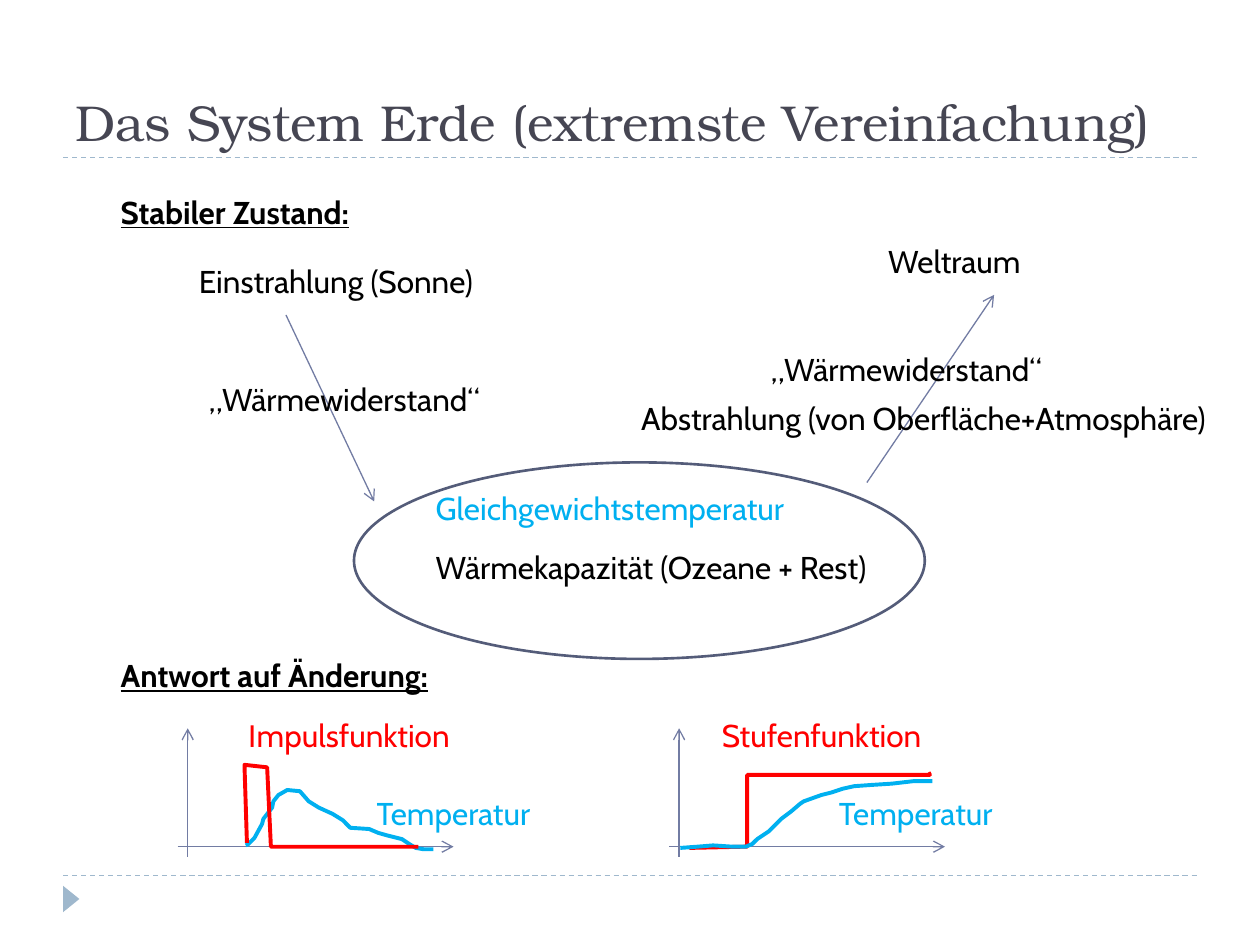
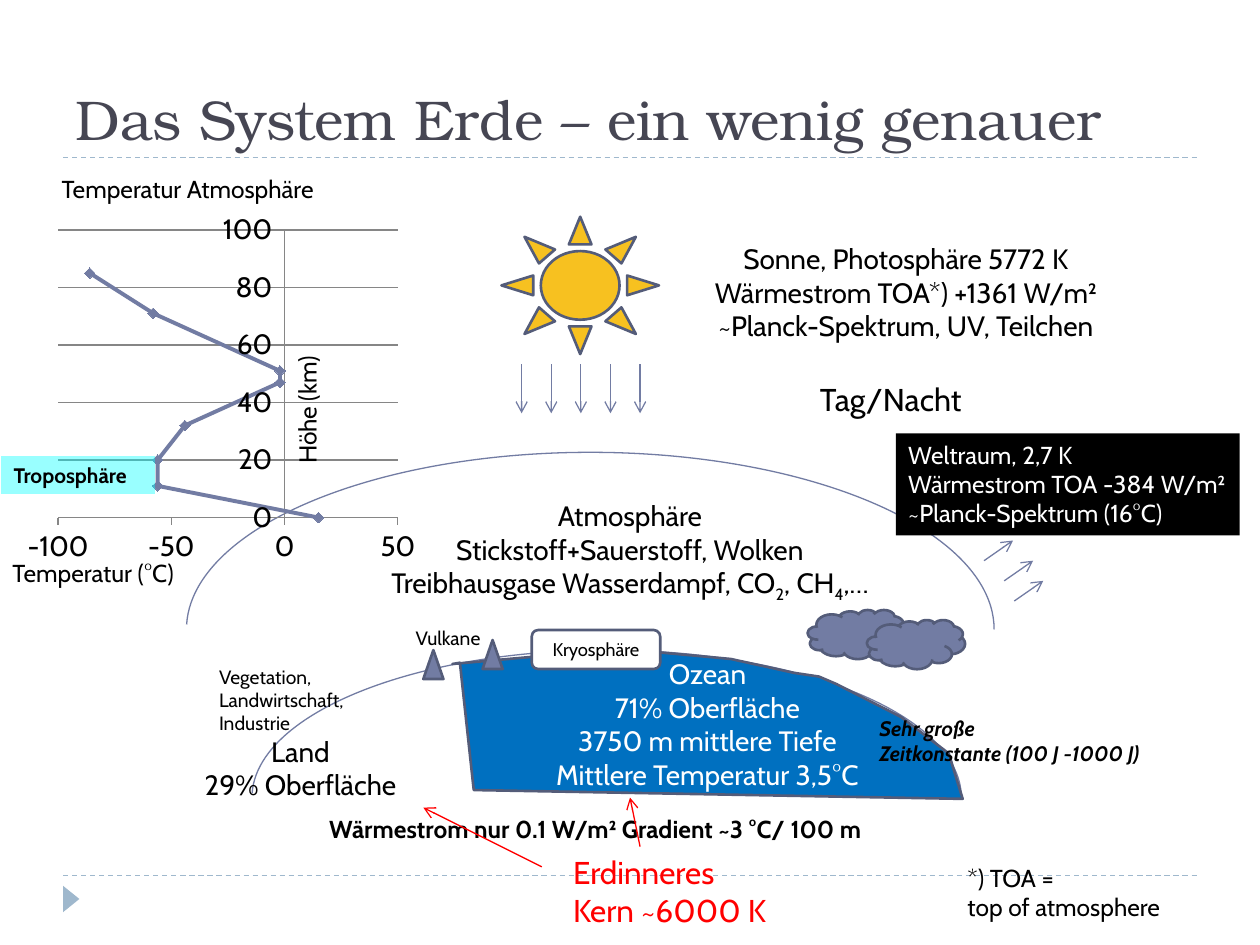
from dataclasses import dataclass

from lxml import etree
from pptx import Presentation
from pptx.chart.data import XyChartData
from pptx.dml.color import RGBColor
from pptx.enum.chart import XL_CHART_TYPE, XL_MARKER_STYLE, XL_TICK_MARK
from pptx.enum.dml import MSO_LINE
from pptx.enum.shapes import MSO_CONNECTOR, MSO_SHAPE
from pptx.enum.text import MSO_ANCHOR, MSO_AUTO_SIZE, PP_ALIGN
from pptx.oxml import parse_xml
from pptx.oxml.ns import nsdecls, qn
from pptx.util import Inches, Pt

STRAIGHT = MSO_CONNECTOR.STRAIGHT
ARC, CLOUD, OVAL = MSO_SHAPE.ARC, MSO_SHAPE.CLOUD, MSO_SHAPE.OVAL
RECT, ROUNDED = MSO_SHAPE.RECTANGLE, MSO_SHAPE.ROUNDED_RECTANGLE
SUN, TRIANGLE = MSO_SHAPE.SUN, MSO_SHAPE.ISOSCELES_TRIANGLE
CENTER = PP_ALIGN.CENTER
TOP, MIDDLE, BOTTOM = MSO_ANCHOR.TOP, MSO_ANCHOR.MIDDLE, MSO_ANCHOR.BOTTOM


@dataclass(frozen=True)
class Theme:
    title_font: str = "TeX Gyre Bonum"
    body_font: str = "Cabin"
    title: str = "464653"
    text: str = "000000"
    white: str = "FFFFFF"
    rule: str = "9FB8CD"
    accent: str = "727CA3"
    outline: str = "545C79"
    red: str = "FF0000"
    cyan: str = "00B0F0"
    ocean: str = "0070C0"
    sun: str = "F7C120"
    tropo: str = "00FFFF"
    grid: str = "868686"
    big: float = 18
    mid: float = 16
    small: float = 14
    note: float = 12
    tiny: float = 11
    thin: float = 0.75
    edge: float = 1.5
    curve: float = 2.25


T = Theme()

# Labels: left, top, width, height, paragraphs, options
HEADING = dict(bold=True, underline=True)
SIMPLE_LABELS = [
    (0.86, 1.48, 2.26, 0.4, ["Stabiler Zustand:"], HEADING),
    (0.86, 5.16, 2.95, 0.4, ["Antwort auf Änderung:"], HEADING),
    (1.48, 2.03, 2.57, 0.4, ["Einstrahlung (Sonne)"], {}),
    (4.99, 3.12, 5.01, 0.4, ["Abstrahlung (von Oberfläche+Atmosphäre)"], {}),
    (3.36, 3.83, 3.12, 0.4, ["Gleichgewichtstemperatur"], dict(color=T.cyan)),
    (3.36, 4.3, 3.95, 0.4, ["Wärmekapazität (Ozeane + Rest)"], {}),
    (1.56, 2.97, 2.41, 0.4, ["„Wärmewiderstand“"], {}),
    (6.02, 2.73, 2.41, 0.4, ["„Wärmewiderstand“"], {}),
    (6.95, 1.87, 1.28, 0.4, ["Weltraum"], {}),
    (1.87, 5.63, 1.84, 0.4, [[("Ι", dict(font="Arial")), ("mpulsfunktion", {})]],
     dict(color=T.red)),
    (5.63, 5.63, 1.81, 0.4, ["Stufenfunktion"], dict(color=T.red)),
    (2.89, 6.25, 1.48, 0.4, ["Temperatur"], dict(color=T.cyan)),
    (6.56, 6.25, 1.48, 0.4, ["Temperatur"], dict(color=T.cyan)),
]
FLUX_ARROWS = [((2.27, 2.5), (2.97, 3.98)), ((6.88, 3.83), (7.89, 2.34))]
GRAPH_LEFTS = (1.41, 5.31)
PULSE = [(1.96, 6.69), (1.94, 6.07), (2.12, 6.09), (2.15, 6.72), (3.32, 6.72)]
PULSE_RESPONSE = [
    (1.95, 6.71), (1.97, 6.7), (2.02, 6.65), (2.08, 6.54), (2.09, 6.5), (2.16, 6.41),
    (2.17, 6.36), (2.21, 6.31), (2.28, 6.27), (2.38, 6.28), (2.45, 6.36), (2.53, 6.41),
    (2.64, 6.46), (2.72, 6.51), (2.78, 6.57), (2.93, 6.58), (3, 6.61), (3.07, 6.63),
    (3.19, 6.66), (3.25, 6.7), (3.3, 6.73), (3.36, 6.74), (3.44, 6.74)]
STEP = [(5.47, 6.73), (5.93, 6.72), (5.93, 6.15), (7.38, 6.15), (7.37, 6.13)]
STEP_RESPONSE = [
    (5.4, 6.73), (5.54, 6.72), (5.66, 6.71), (5.81, 6.72), (5.92, 6.72), (5.97, 6.7),
    (6.01, 6.66), (6.1, 6.6), (6.13, 6.57), (6.2, 6.5), (6.28, 6.44), (6.35, 6.38),
    (6.38, 6.36), (6.52, 6.31), (6.6, 6.29), (6.69, 6.26), (6.78, 6.24), (6.92, 6.23),
    (7.08, 6.22), (7.25, 6.2), (7.4, 6.2)]
CURVES = [(PULSE_RESPONSE, T.cyan), (STEP, T.red), (STEP_RESPONSE, T.cyan), (PULSE, T.red)]

SUB = dict(sub=True)
DETAIL_LABELS = [
    (1.48, 5.78, 1.81, 0.64, ["Land", "29% Oberfläche"], dict(size=T.mid, align=CENTER)),
    (2.58, 3.91, 4.84, 0.91,
     ["Atmosphäre", "Stickstoff+Sauerstoff, Wolken",
      [("Treibhausgase Wasserdampf, CO", {}), ("2", SUB), (", CH", {}), ("4", SUB),
       (",…", {})]], dict(size=T.mid, align=CENTER, wrap=True)),
    (4.77, 1.87, 4.84, 0.91,
     ["Sonne, Photosphäre 5772 K", "Wärmestrom TOA*) +1361 W/m²",
      "~Planck-Spektrum, UV, Teilchen"], dict(size=T.mid, align=CENTER, wrap=True)),
    (3.2, 4.92, 0.76, 0.29, ["Vulkane"], dict(size=T.tiny)),
    (0, 4.38, 1.59, 0.34, ["Temperatur (°C)"], dict(size=T.small)),
    (1.88, 3.05, 1.12, 0.34, ["Höhe (km)"], dict(size=T.small, rotation=270)),
    (4.45, 6.72, 1.75, 0.71, ["Erdinneres", "Kern ~6000 K"], dict(color=T.red)),
    (7.58, 6.8, 1.78, 0.57, ["*) TOA =\vtop of atmosphere"], dict(size=T.small)),
    (1.64, 5.23, 1.24, 0.66, ["Vegetation,", "Landwirtschaft,", "Industrie"],
     dict(size=T.tiny)),
    (6.88, 5.63, 2.49, 0.5, ["Sehr große\vZeitkonstante (100 J -1000 J)"],
     dict(size=T.note, bold=True, italic=True)),
    (6.41, 2.97, 1.34, 0.4, ["Tag/Nacht"], {}),
    (0.39, 1.33, 2.29, 0.34, ["Temperatur Atmosphäre"], dict(size=T.small)),
    (1.25, 6.41, 6.95, 0.34, ["Wärmestrom nur 0.1 W/m² Gradient ~3 °C/ 100 m"],
     dict(size=T.small, bold=True, align=CENTER, wrap=True)),
]
OCEAN_OUTLINE = [
    (3.59, 5.27), (4.93, 5.15), (5.8, 5.23), (6.3, 5.34), (6.5, 5.37), (6.64, 5.43),
    (7.15, 5.69), (7.53, 5.98), (7.64, 6.34), (3.76, 6.27), (3.65, 5.26)]
OCEAN_TEXT = ["Ozean", "71% Oberfläche", "3750 m mittlere Tiefe", "Mittlere Temperatur 3,5°C"]
SPACE_TEXT = ["Weltraum, 2,7 K", "Wärmestrom TOA -384 W/m²\v~Planck-Spektrum (16°C)"]
ARCS = [(2, 5.16, 5.63, 2.34), (1.48, 3.59, 6.41, 2.81)]
SCENERY = [
    (CLOUD, (6.41, 4.84, 0.78, 0.39), T.accent),
    (CLOUD, (6.88, 4.92, 0.78, 0.39), T.accent),
    (SUN, (3.98, 1.72, 1.25, 1.09), T.sun),
    (TRIANGLE, (3.36, 5.16, 0.16, 0.23), T.accent),
    (TRIANGLE, (3.83, 5.08, 0.16, 0.23), T.accent),
]
SPACE_ARROW_STARTS = [(7.81, 4.45), (7.97, 4.61), (8.05, 4.77)]
CORE_ARROWS = [((4.3, 6.88), (3.36, 6.41)), ((5.08, 6.72), (5, 6.33))]
# (temperature in °C, height in km)
PROFILE = [(15, 0), (-56, 11), (-56, 20), (-44, 32), (-2, 47), (-2, 51), (-58, 71), (-86, 85)]
PLOT_AREA = dict(x=0.094, y=0.064, w=0.843, h=0.79)


def rgb(color):
    return RGBColor.from_string(color)


def box(values):
    return [Inches(v) for v in values]


def write(tf, paragraphs, size=T.big, color=T.text, font=T.body_font, bold=False,
          italic=False, underline=False, align=PP_ALIGN.LEFT, anchor=TOP, wrap=False,
          grow=True):
    tf.word_wrap = wrap
    tf.auto_size = MSO_AUTO_SIZE.SHAPE_TO_FIT_TEXT if grow else MSO_AUTO_SIZE.NONE
    tf.vertical_anchor = anchor
    for i, content in enumerate(paragraphs):
        p = tf.paragraphs[0] if i == 0 else tf.add_paragraph()
        p.alignment = align
        styles = [{}]
        if isinstance(content, str):
            p.text = content
            styles *= len(p.runs)
        else:
            for words, _ in content:
                p.add_run().text = words
            styles = [style for _, style in content]
        for r, style in zip(p.runs, styles):
            r.font.name = style.get("font", font)
            r.font.size = Pt(size)
            r.font.color.rgb = rgb(color)
            r.font.bold, r.font.italic, r.font.underline = bold, italic, underline
            if style.get("sub"):
                r.font._element.set("baseline", "-25000")


def label(s, x, y, w, h, paragraphs, rotation=0, **style):
    tb = s.shapes.add_textbox(*box((x, y, w, h)))
    tb.rotation = rotation
    write(tb.text_frame, paragraphs, **style)


def paint(sp, fill=None, line=None, width=T.edge):
    sp.shadow.inherit = False
    if fill:
        sp.fill.solid()
        sp.fill.fore_color.rgb = rgb(fill)
    else:
        sp.fill.background()
    if line:
        sp.line.color.rgb = rgb(line)
        sp.line.width = Pt(width)
    else:
        sp.line.fill.background()
    return sp


def preset(s, kind, at, **style):
    return paint(s.shapes.add_shape(kind, *box(at)), **style)


def outline(s, points, close=False, **style):
    start, *rest = [box(point) for point in points]
    builder = s.shapes.build_freeform(*start)
    builder.add_line_segments(rest, close=close)
    return paint(builder.convert_to_shape(), **style)


def line(s, start, end, color=T.accent, arrow=True):
    c = s.shapes.add_connector(STRAIGHT, *box((*start, *end)))
    c.line.color.rgb = rgb(color)
    c.line.width = Pt(T.thin)
    if arrow:
        etree.SubElement(c.line._get_or_add_ln(), qn("a:tailEnd"), type="arrow")
    else:
        c.line.dash_style = MSO_LINE.DASH
    etree.SubElement(c._element.spPr, qn("a:effectLst"))


def new_slide(prs, title, size):
    s = prs.slides.add_slide(prs.slide_layouts[6])
    for y in (6.95, 1.25):
        line(s, (0.5, y), (9.5, y), T.rule, arrow=False)
    preset(s, TRIANGLE, (0.46, 7.07, 0.21, 0.13), fill=T.rule).rotation = 90
    label(s, 0.5, 0.25, 9, 1, [title], size=size, color=T.title, font=T.title_font,
          anchor=BOTTOM, wrap=True, grow=False)
    return s


def scale_axis(axis, low, high, step):
    axis.minimum_scale, axis.maximum_scale, axis.major_unit = low, high, step
    axis.major_tick_mark, axis.minor_tick_mark = XL_TICK_MARK.OUTSIDE, XL_TICK_MARK.NONE
    axis.format.line.color.rgb = rgb(T.grid)
    axis.format.line.width = Pt(T.thin)


def temperature_chart(s):
    data = XyChartData()
    series = data.add_series("Series 1")
    for celsius, km in PROFILE:
        series.add_data_point(celsius, km)
    chart = s.shapes.add_chart(XL_CHART_TYPE.XY_SCATTER_LINES,
                               *box((0.16, 1.64, 3.2, 2.89)), data).chart
    chart.has_legend = chart.has_title = False
    chart.font.name, chart.font.size = T.body_font, Pt(T.mid)
    chart.font.color.rgb = rgb(T.text)
    scale_axis(chart.category_axis, -100, 50, 50)
    scale_axis(chart.value_axis, 0, 100, 20)
    chart.category_axis.has_major_gridlines = False
    chart.value_axis.has_major_gridlines = True
    chart.value_axis.major_gridlines.format.line.color.rgb = rgb(T.grid)

    plot = chart.plots[0]
    plot.vary_by_categories = False
    profile = plot.series[0]
    profile.smooth = False
    profile.format.line.color.rgb = rgb(T.accent)
    profile.format.line.width = Pt(T.curve)
    profile.marker.style, profile.marker.size = XL_MARKER_STYLE.DIAMOND, 6
    profile.marker.format.fill.solid()
    profile.marker.format.fill.fore_color.rgb = rgb(T.accent)
    profile.marker.format.line.color.rgb = rgb(T.accent)

    area = chart._chartSpace.find(".//" + qn("c:plotArea"))
    for old in area.findall(qn("c:layout")):
        area.remove(old)
    sizes = "".join(f'<c:{k} val="{v}"/>' for k, v in PLOT_AREA.items())
    area.insert(0, parse_xml(
        f'<c:layout {nsdecls("c")}><c:manualLayout><c:layoutTarget val="inner"/>'
        f'<c:xMode val="edge"/><c:yMode val="edge"/>{sizes}</c:manualLayout></c:layout>'))


def simple_model(prs):
    s = new_slide(prs, "Das System Erde (extremste Vereinfachung)", 28.8)
    for start, end in FLUX_ARROWS:
        line(s, start, end)
    for x in GRAPH_LEFTS:
        line(s, (x, 6.72), (x + 2.19, 6.72))
        line(s, (x + 0.08, 6.8), (x + 0.08, 5.78))
    preset(s, OVAL, (2.81, 3.67, 4.53, 1.56), line=T.outline)
    for points, color in CURVES:
        outline(s, points, line=color, width=T.curve)
    for *place, style in SIMPLE_LABELS:
        label(s, *place, **style)


def detailed_model(prs):
    s = new_slide(prs, "Das System Erde – ein wenig genauer", 32)
    for at in ARCS:
        arc = preset(s, ARC, at, line=T.accent, width=T.thin)
        arc.adjustments[0], arc.adjustments[1] = 108.417, 0
    ocean = outline(s, OCEAN_OUTLINE, close=True, fill=T.ocean, line=T.outline)
    write(ocean.text_frame, OCEAN_TEXT, size=T.mid, color=T.white, align=CENTER,
          anchor=MIDDLE, wrap=True, grow=False)
    for kind, at, fill in SCENERY:
        preset(s, kind, at, fill=fill, line=T.outline)
    temperature_chart(s)

    ice = preset(s, ROUNDED, (4.22, 5, 1.02, 0.31), fill=T.white, line=T.outline)
    write(ice.text_frame, ["Kryosphäre"], size=10.5, align=CENTER, anchor=MIDDLE,
          wrap=True, grow=False)
    space = preset(s, RECT, (7.11, 3.44, 2.73, 0.81), fill=T.text)
    write(space.text_frame, SPACE_TEXT, size=T.small, color=T.white)
    tropo = preset(s, RECT, (0.01, 3.62, 1.22, 0.3), fill=T.tropo)
    color = tropo._element.spPr.find(".//" + qn("a:srgbClr"))
    etree.SubElement(color, qn("a:alpha"), val="40000")
    write(tropo.text_frame, ["Troposphäre"], size=T.note, bold=True, wrap=True)

    for i in range(5):
        x = 4.14 + i * 0.235
        line(s, (x, 2.89), (x, 3.28))
    for x, y in SPACE_ARROW_STARTS:
        line(s, (x, y), (x + 0.23, y - 0.16))
    for *place, style in DETAIL_LABELS:
        label(s, *place, **style)
    for start, end in CORE_ARROWS:
        line(s, start, end, T.red)


def main():
    prs = Presentation()
    prs.slide_width, prs.slide_height = Inches(10), Inches(7.5)
    simple_model(prs)
    detailed_model(prs)
    prs.save("out.pptx")


if __name__ == "__main__":
    main()
